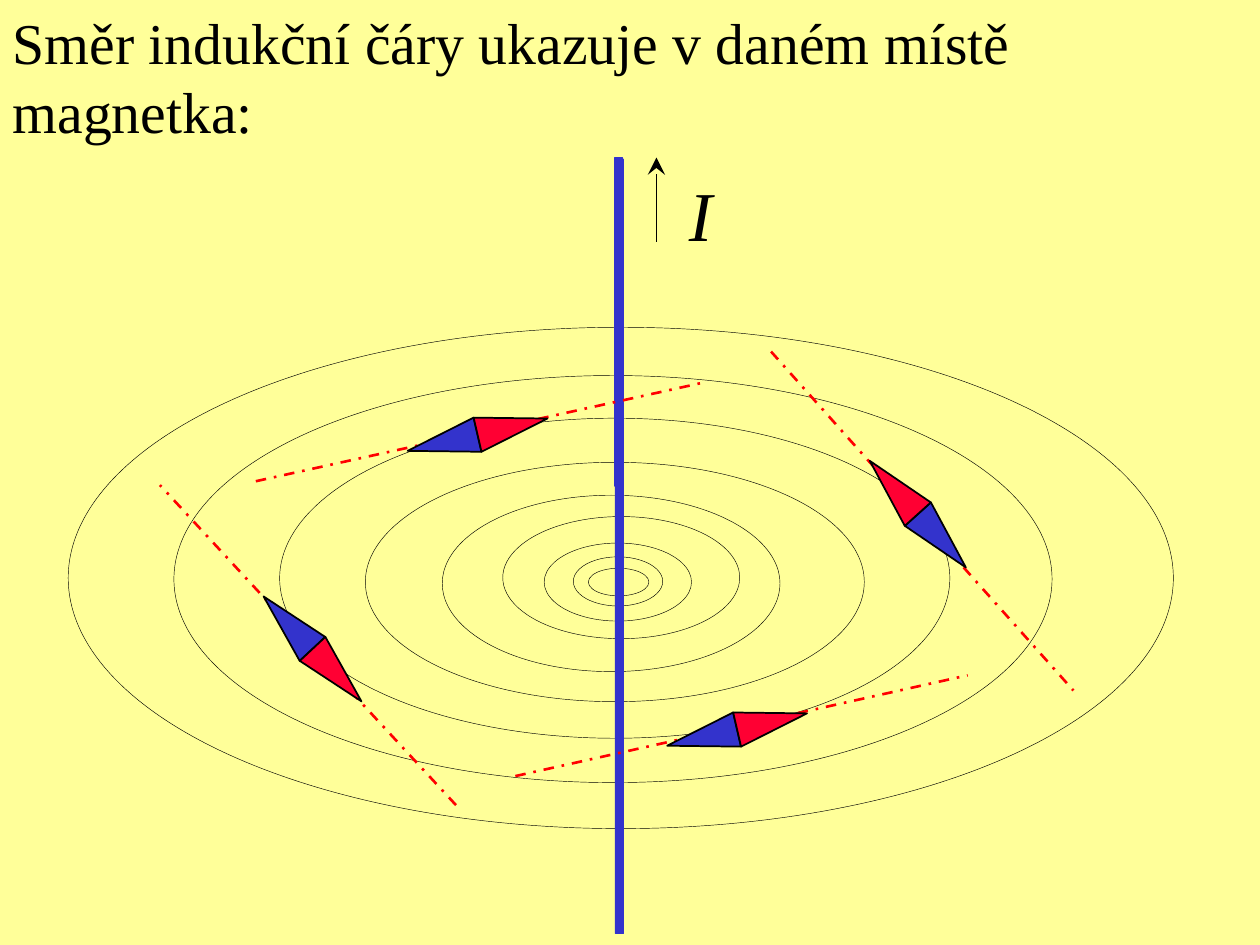
"""Build the slide on magnetic needles around a straight current-carrying wire."""
from math import cos, radians, sin

from lxml.etree import SubElement
from pptx import Presentation
from pptx.dml.color import RGBColor
from pptx.enum.dml import MSO_LINE
from pptx.enum.shapes import MSO_CONNECTOR, MSO_SHAPE
from pptx.enum.text import MSO_ANCHOR, MSO_AUTO_SIZE, PP_ALIGN
from pptx.oxml.ns import qn
from pptx.util import Pt

YELLOW = RGBColor(0xFF, 0xFF, 0x99)
BLUE = RGBColor(0x33, 0x33, 0xCC)
RED = RGBColor(0xFF, 0x00, 0x33)
TANGENT_RED = RGBColor(0xFF, 0x00, 0x00)
BLACK = RGBColor(0x00, 0x00, 0x00)
FONT = "Times New Roman"

TITLE = "Směr indukční čáry ukazuje v daném místě magnetka:"
FIELD_LINES = [
    (39, 187, 631.5, 286.5),
    (99.4, 214.6, 501.8, 232.6),
    (159.8, 239, 383, 182.9),
    (208.8, 264.2, 285.1, 136.8),
    (252.7, 283, 193, 100.8),
    (287.3, 295.2, 135.4, 69.8),
    (311, 310.3, 84.2, 44.6),
    (327.6, 318.2, 51.1, 28.1),
    (336.2, 324.7, 34.6, 15.8),
]
WIRE = [((351.4, 90.7, 5, 442.8), 0.25), ((351.4, 90, 4.3, 187.9), 1)]
TANGENTS = [
    (440.6, 200.9, 613.4, 394.6),
    (294.5, 443.5, 553, 385.9),
    (260.6, 460.1, 91.4, 277.2),
    (146.2, 275, 403.9, 218.2),
]
NEEDLES = [
    (524.5, 293.8, 138),
    (421.2, 416.9, 257),
    (178.6, 370.8, 317),
    (272.9, 248.4, 257),
]
NEEDLE_WIDTH, NEEDLE_HALF = 20, 41
CURRENT_ARROW = (375.1, 138.2, 375.1, 90)


def write_text(shape, text, box, size, wrap=True, italic=False):
    shape.left, shape.top, shape.width, shape.height = map(Pt, box)
    frame = shape.text_frame
    frame.auto_size = MSO_AUTO_SIZE.NONE
    frame.word_wrap = wrap
    frame.vertical_anchor = MSO_ANCHOR.TOP
    paragraph = frame.paragraphs[0]
    paragraph.alignment = PP_ALIGN.LEFT
    run = paragraph.add_run()
    run.text = text
    run.font.name = FONT
    run.font.size = Pt(size)
    run.font.italic = italic
    run.font.color.rgb = BLACK


def add_filled(slide, kind, box, fill, line, line_width, rotation=0):
    shape = slide.shapes.add_shape(kind, *map(Pt, box))
    shape.shadow.inherit = False
    shape.fill.solid()
    shape.fill.fore_color.rgb = fill
    shape.line.color.rgb = line
    shape.line.width = Pt(line_width)
    shape.rotation = rotation


def add_line(slide, ends, color, width):
    connector = slide.shapes.add_connector(MSO_CONNECTOR.STRAIGHT, *map(Pt, ends))
    connector.line.color.rgb = color
    connector.line.width = Pt(width)
    SubElement(connector._element.spPr, qn("a:effectLst"))
    return connector


def add_needle(slide, x, y, angle):
    for color, rotation in ((BLUE, angle), (RED, (angle + 180) % 360)):
        center_x = x + NEEDLE_HALF / 2 * sin(radians(rotation))
        center_y = y - NEEDLE_HALF / 2 * cos(radians(rotation))
        box = (center_x - NEEDLE_WIDTH / 2, center_y - NEEDLE_HALF / 2,
               NEEDLE_WIDTH, NEEDLE_HALF)
        add_filled(slide, MSO_SHAPE.ISOSCELES_TRIANGLE, box, color, BLACK, 1, rotation)


def main():
    presentation = Presentation()
    presentation.slide_width, presentation.slide_height = Pt(720), Pt(540)
    slide = presentation.slides.add_slide(presentation.slide_layouts[5])
    slide.background.fill.solid()
    slide.background.fill.fore_color.rgb = YELLOW

    write_text(slide.shapes.title, TITLE, (0, 0, 715, 86), 33)
    arrow = add_line(slide, CURRENT_ARROW, BLACK, 0.25)
    SubElement(arrow.line._get_or_add_ln(), qn("a:tailEnd"), type="stealth", w="lg", len="lg")
    label = slide.shapes.add_textbox(0, 0, 0, 0)
    write_text(label, "I", (386.6, 94.3, 28, 55.4), 40, wrap=False, italic=True)

    for box in FIELD_LINES:
        add_filled(slide, MSO_SHAPE.OVAL, box, YELLOW, BLACK, 0.25)
    for box, line_width in WIRE:
        add_filled(slide, MSO_SHAPE.RECTANGLE, box, BLUE, BLUE, line_width)
    for ends in TANGENTS:
        add_line(slide, ends, TANGENT_RED, 1.5).line.dash_style = MSO_LINE.DASH_DOT
    for needle in NEEDLES:
        add_needle(slide, *needle)

    presentation.save("out.pptx")


if __name__ == "__main__":
    main()
